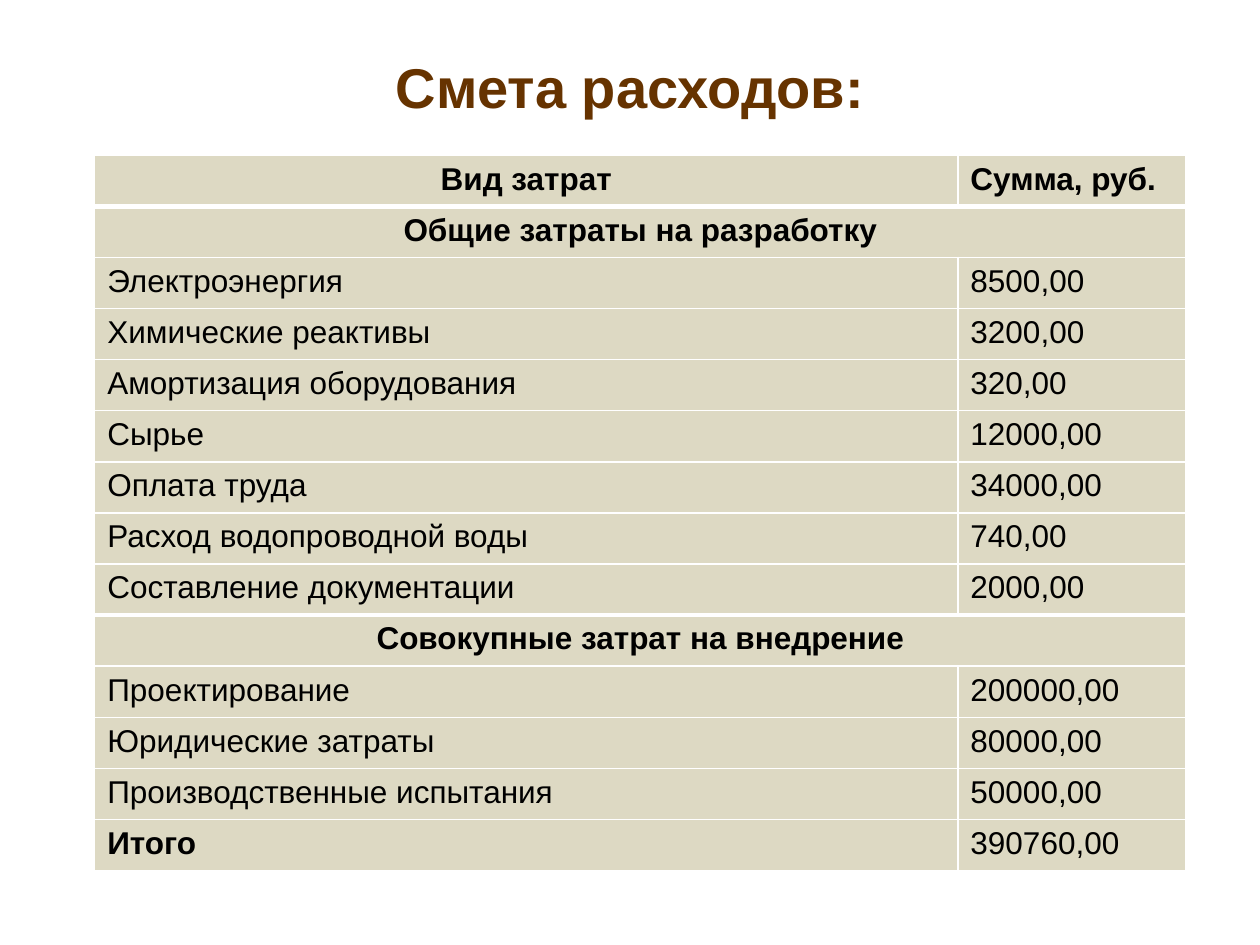
from lxml.etree import SubElement
from pptx import Presentation
from pptx.dml.color import RGBColor
from pptx.enum.text import MSO_ANCHOR, PP_ALIGN
from pptx.oxml.ns import qn
from pptx.util import Cm, Pt

TITLE = "Смета расходов:"
# A row with one entry is a section heading across both columns.
DEVELOPMENT = [
    ("Вид затрат", "Сумма, руб."),
    ("Общие затраты на разработку",),
    ("Электроэнергия", "8500,00"),
    ("Химические реактивы", "3200,00"),
    ("Амортизация оборудования", "320,00"),
    ("Сырье", "12000,00"),
    ("Оплата труда", "34000,00"),
    ("Расход водопроводной воды", "740,00"),
]
ROLLOUT = [
    ("Составление документации", "2000,00"),
    ("Совокупные затрат на внедрение",),
    ("Проектирование", "200000,00"),
    ("Юридические затраты", "80000,00"),
    ("Производственные испытания", "50000,00"),
    ("Итого", "390760,00"),
]
BOLD = {"Вид затрат", "Сумма, руб.", "Итого"}
CENTRED = {"Вид затрат"}

LEFT, TOP = Cm(1.91), Cm(3.13)
COLUMN_WIDTHS = Cm(17.4), Cm(4.6)
ROW_HEIGHT = Cm(1.03)
BROWN, BLACK, SAND, WHITE = "663300", "000000", "DDD9C3", "FFFFFF"


def paint(color_format, color):
    color_format.rgb = RGBColor.from_string(color)


def write(frame, text, size, color, bold, centred):
    paragraph = frame.paragraphs[0]
    paragraph.alignment = PP_ALIGN.CENTER if centred else PP_ALIGN.LEFT
    run = paragraph.add_run()
    run.text = text
    run.font.name = "Arial"
    run.font.size = Pt(size)
    run.font.bold = bold
    paint(run.font.color, color)


def set_borders(cell, widths):
    """Draw white borders; widths maps a side (L, R, T, B) to points."""
    properties = cell._tc.get_or_add_tcPr()
    for position, (side, width) in enumerate(widths.items()):
        line = properties.makeelement(qn(f"a:ln{side}"), {"w": str(Pt(width))})
        properties.insert(position, line)
        fill = SubElement(line, qn("a:solidFill"))
        SubElement(fill, qn("a:srgbClr"), val=WHITE)


def add_cost_table(slide, rows, top):
    """Add one table and return the position of its bottom edge."""
    height = ROW_HEIGHT * len(rows)
    table = slide.shapes.add_table(
        len(rows), 2, LEFT, top, sum(COLUMN_WIDTHS), height).table
    for column, width in zip(table.columns, COLUMN_WIDTHS):
        column.width = width
    for r, entries in enumerate(rows):
        table.rows[r].height = ROW_HEIGHT
        section = len(entries) == 1
        if section:
            table.cell(r, 0).merge(table.cell(r, 1))
        for c in range(2):
            cell = table.cell(r, c)
            cell.fill.solid()
            paint(cell.fill.fore_color, SAND)
            set_borders(cell, {"L": 1, "R": 1, "T": 3 if r == 1 else 1,
                               "B": 3 if r == 0 else 1})
        for c, text in enumerate(entries):
            write(table.cell(r, c).text_frame, text, 18, BLACK,
                  section or text in BOLD, section or text in CENTRED)
    return top + height


def main():
    deck = Presentation()
    deck.slide_width, deck.slide_height = Cm(25.4), Cm(19.05)
    slide = deck.slides.add_slide(deck.slide_layouts[5])

    title = slide.shapes.title
    title.left, title.top = Cm(1.27), Cm(0.92)
    title.width, title.height = Cm(22.86), Cm(1.62)
    title.text_frame.vertical_anchor = MSO_ANCHOR.MIDDLE
    write(title.text_frame, TITLE, 32, BROWN, True, True)

    top = TOP
    for rows in (DEVELOPMENT, ROLLOUT):
        top = add_cost_table(slide, rows, top)

    deck.save("out.pptx")


if __name__ == "__main__":
    main()
